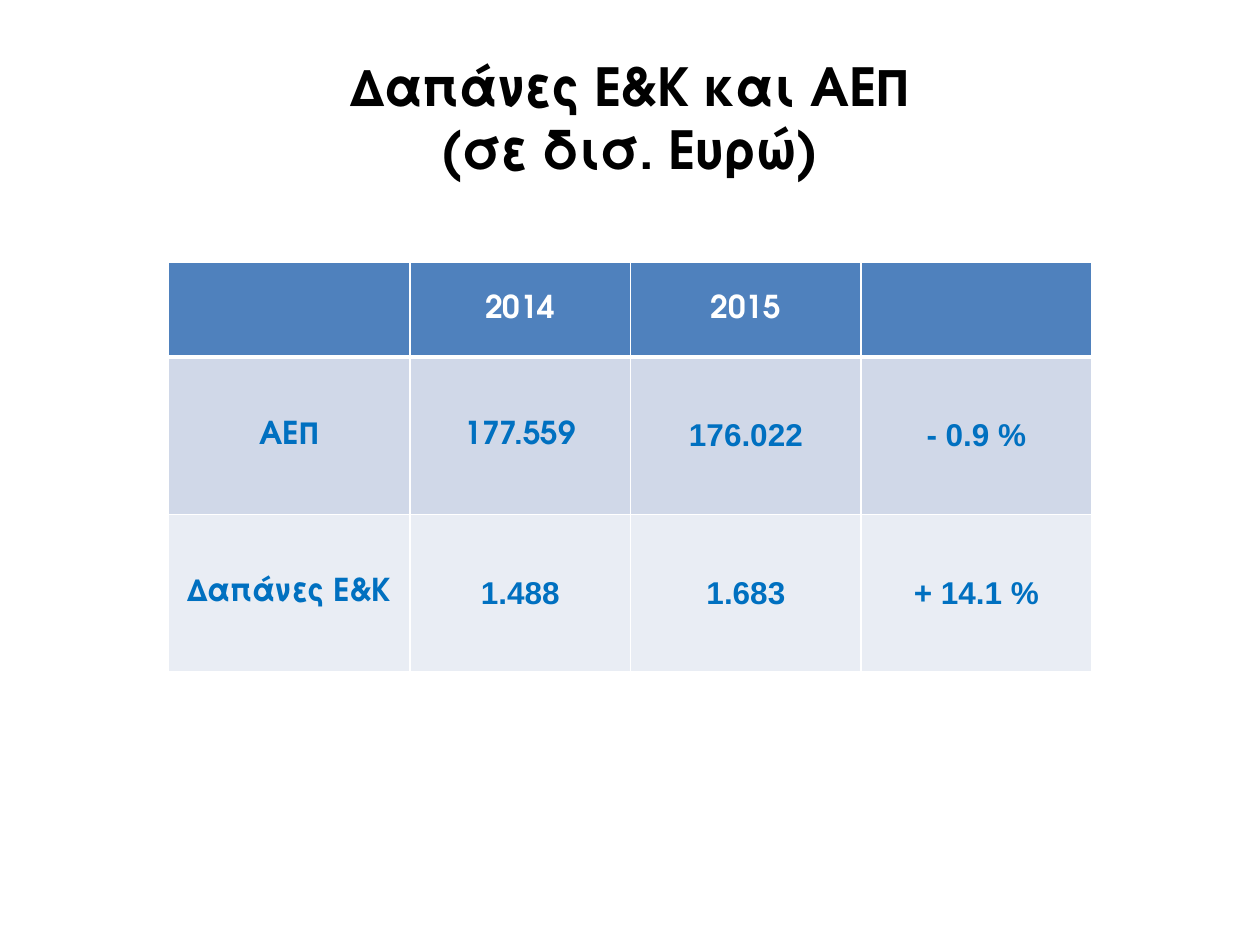
from lxml import etree
from pptx import Presentation
from pptx.dml.color import RGBColor
from pptx.enum.text import MSO_ANCHOR as Anchor, PP_ALIGN as Align
from pptx.oxml.ns import qn
from pptx.util import Inches, Pt

WIDTH, HEIGHT = 10, 7.5
DISPLAY, PLAIN = "TeX Gyre Adventor", "Arial"
BLACK, WHITE, BLUE = "000000", "FFFFFF", "0070C0"
ROW_FILLS = ["4F81BD", "D0D8E8", "E9EDF4"]
COLUMN_WIDTHS = [1.92, 1.75, 1.83, 1.83]
ROW_HEIGHTS = [0.75, 1.25, 1.25]
SPENDING = [
    ["", "2014", "2015", ""],
    ["ΑΕΠ", "177.559", "176.022", "- 0.9 %"],
    ["Δαπάνες Ε&Κ", "1.488", "1.683", "+ 14.1 %"],
]
DISPLAY_CELLS = {(0, 1), (0, 2), (1, 0), (1, 1), (2, 0)}


def color(value):
    return RGBColor.from_string(value)


def write(frame, text, font, size, ink):
    """Put centred bold text in a frame; a vertical tab breaks the line."""
    para = frame.paragraphs[0]
    para.text = text
    para.alignment = Align.CENTER
    for span in para.runs:
        for name, value in {"name": font, "size": Pt(size), "bold": True}.items():
            setattr(span.font, name, value)
        span.font.color.rgb = color(ink)


def border_cell(cell, widths):
    """Draw white borders, given as points by side, beneath the cell fill."""
    props = cell._tc.get_or_add_tcPr()
    for place, (side, width) in enumerate(widths.items()):
        line = etree.Element(qn(f"a:ln{side}"), w=str(Pt(width)))
        fill = etree.SubElement(line, qn("a:solidFill"))
        etree.SubElement(fill, qn("a:srgbClr"), val=WHITE)
        props.insert(place, line)


def add_title(page, left, top, width, height):
    box = page.shapes.add_textbox(*map(Inches, (left, top, width, height)))
    frame = box.text_frame
    frame.word_wrap = True
    frame.vertical_anchor = Anchor.MIDDLE
    write(frame, "Δαπάνες Ε&Κ και ΑΕΠ\v(σε δισ. Ευρώ)", DISPLAY, 30, BLACK)


def add_spending_table(page, left, top):
    size = sum(COLUMN_WIDTHS), sum(ROW_HEIGHTS)
    table = page.shapes.add_table(
        len(ROW_HEIGHTS), len(COLUMN_WIDTHS), *map(Inches, (left, top, *size))
    ).table
    for column, width in zip(table.columns, COLUMN_WIDTHS):
        column.width = Inches(width)
    for row, height in zip(table.rows, ROW_HEIGHTS):
        row.height = Inches(height)
    for r, texts in enumerate(SPENDING):
        for c, text in enumerate(texts):
            cell = table.cell(r, c)
            cell.vertical_anchor = Anchor.MIDDLE
            cell.fill.solid()
            cell.fill.fore_color.rgb = color(ROW_FILLS[r])
            border_cell(cell, {"L": 1, "R": 1,
                               "T": 3 if r == 1 else 1,
                               "B": 3 if r == 0 else 1})
            font = DISPLAY if (r, c) in DISPLAY_CELLS else PLAIN
            write(cell.text_frame, text, font, 18, BLUE if r else WHITE)


def main():
    deck = Presentation()
    deck.slide_width, deck.slide_height = Inches(WIDTH), Inches(HEIGHT)
    page = deck.slides.add_slide(deck.slide_layouts[6])
    add_title(page, 0.05 * WIDTH, 0.04 * HEIGHT, 0.9 * WIDTH, HEIGHT / 6)
    add_spending_table(page, (WIDTH - sum(COLUMN_WIDTHS)) / 2, HEIGHT * 5 / 18)
    deck.save("out.pptx")


if __name__ == "__main__":
    main()
